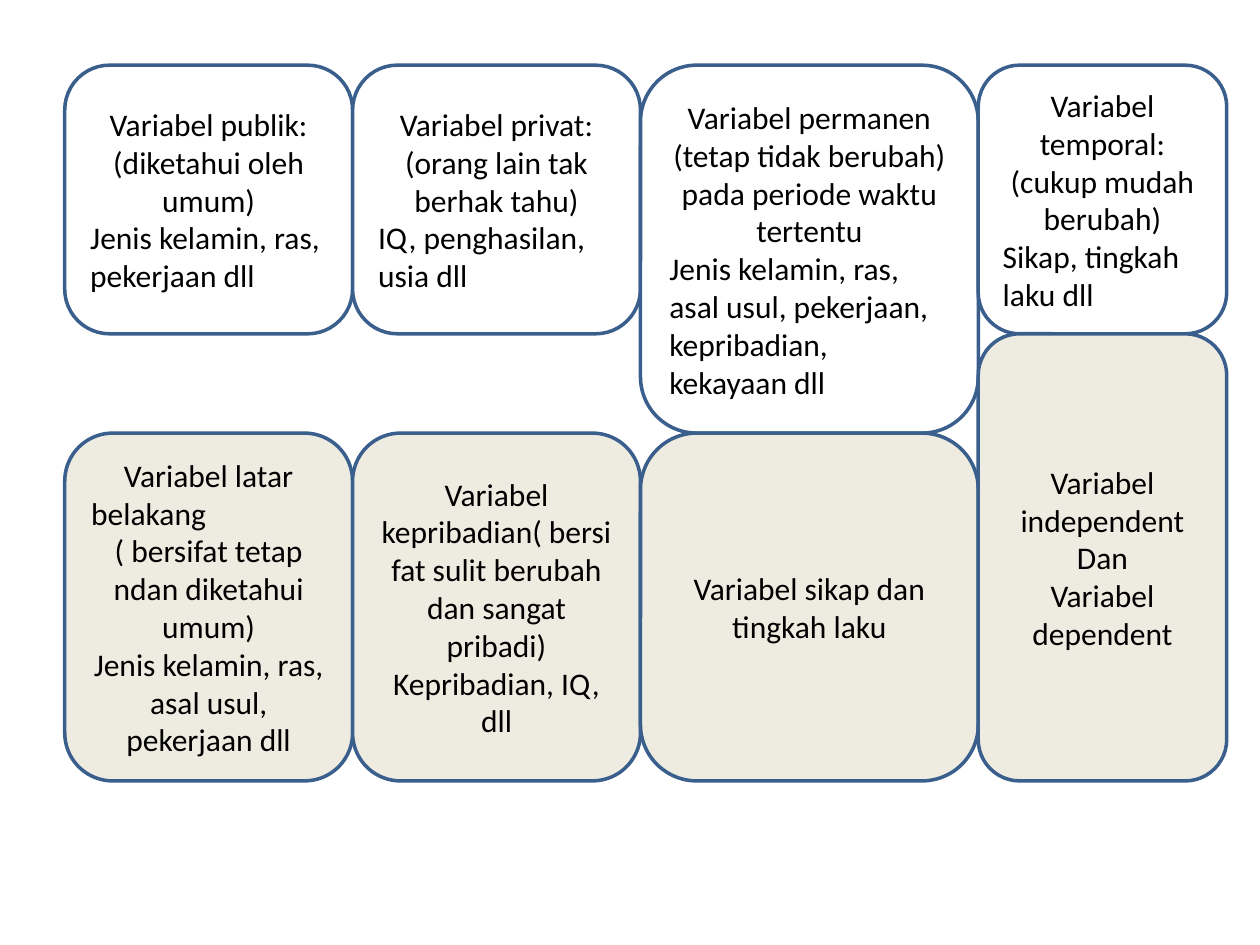
from itertools import accumulate

from pptx import Presentation
from pptx.dml.color import RGBColor
from pptx.enum.shapes import MSO_SHAPE as Shape
from pptx.enum.text import MSO_ANCHOR as Anchor, PP_ALIGN as Align
from pptx.util import Pt

WHITE, CREAM, BLUE, BLACK = "FFFFFF", "EEECE1", "3A5F8C", "000000"
LEFT, TOP, BASE = 37, 37.25, 446.25
WIDTHS = (164.5, 164.5, 193, 142)
EDGES = list(accumulate(WIDTHS, initial=LEFT))

# Each line is centred unless it starts with "<", which sets it left.
# One entry a column: bottom edge of the upper card, its lines
UPPER = [
    (190.75, ["Variabel publik:", "(diketahui oleh umum)",
              "<Jenis kelamin, ras, pekerjaan dll"]),
    (190.75, ["Variabel privat:", "(orang lain tak berhak tahu)",
              "<IQ, penghasilan, usia dll"]),
    (247.5, ["Variabel permanen",
             "(tetap tidak berubah) pada periode waktu tertentu",
             "<Jenis kelamin, ras, asal usul, pekerjaan, kepribadian, "
             "kekayaan dll"]),
    (190.75, ["Variabel temporal:", "(cukup mudah berubah)",
              "<Sikap, tingkah laku dll"]),
]
# One entry a column: top edge of the lower card, its lines
LOWER = [
    (247.5, ["Variabel latar", "<belakang",
             "( bersifat tetap ndan diketahui umum)",
             "Jenis kelamin, ras, asal usul, pekerjaan dll"]),
    (247.5, ["Variabel kepribadian( bersifat sulit berubah dan sangat pribadi)",
             "Kepribadian, IQ, dll"]),
    (247.5, ["Variabel sikap dan tingkah laku"]),
    (190.75, ["Variabel independent", "Dan", "Variabel dependent"]),
]


def color(code):
    return RGBColor.from_string(code)


def write(para, text, size=18, font="Calibri", ink=BLACK, align=Align.CENTER):
    para.alignment = align
    run = para.add_run()
    run.text = text
    run.font.size = Pt(size)
    run.font.name = font
    run.font.color.rgb = color(ink)


def card(slide, x, y, w, h, lines, fill):
    box = slide.shapes.add_shape(Shape.ROUNDED_RECTANGLE,
                                 Pt(x), Pt(y), Pt(w), Pt(h))
    box.shadow.inherit = False
    box.fill.solid()
    box.fill.fore_color.rgb = color(fill)
    box.line.color.rgb = color(BLUE)
    box.line.width = Pt(2)
    frame = box.text_frame
    frame.word_wrap = True
    frame.vertical_anchor = Anchor.MIDDLE
    for i, line in enumerate(lines):
        para = frame.add_paragraph() if i else frame.paragraphs[0]
        align = Align.LEFT if line.startswith("<") else Align.CENTER
        write(para, line.removeprefix("<"), align=align)


def main():
    deck = Presentation()
    deck.slide_width, deck.slide_height = Pt(720), Pt(540)
    slide = deck.slides.add_slide(deck.slide_layouts[6])

    # Upper row: kinds of variable by openness and permanence
    for x, w, (end, lines) in zip(EDGES, WIDTHS, UPPER):
        card(slide, x, TOP, w, end - TOP, lines, WHITE)

    # Lower row: kinds of variable by content and role
    for x, w, (top, lines) in zip(EDGES, WIDTHS, LOWER):
        card(slide, x, top, w, BASE - top, lines, CREAM)

    deck.save("out.pptx")


if __name__ == "__main__":
    main()
